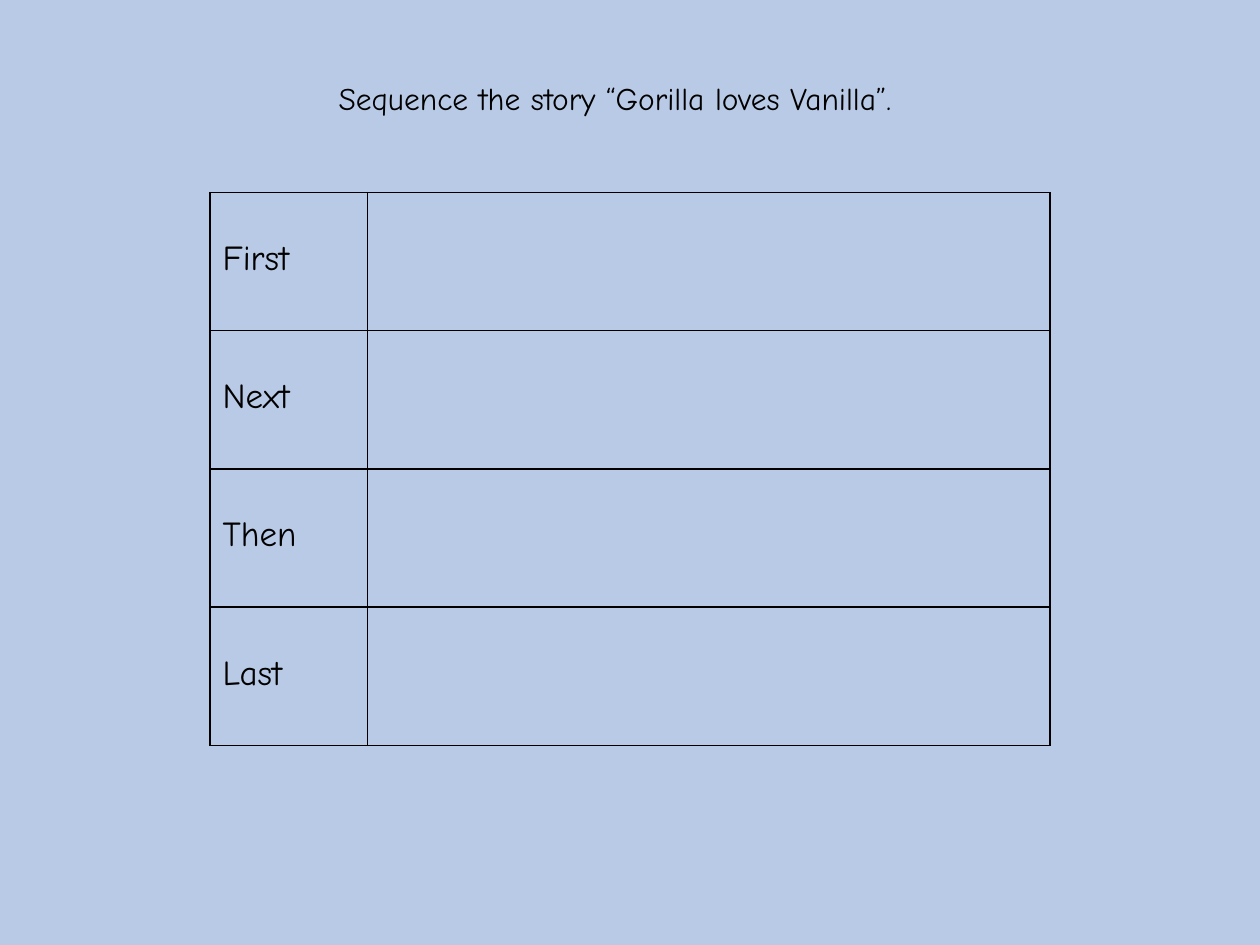
import pptx
import pptx.dml.color
import pptx.enum.text
import pptx.oxml
import pptx.oxml.ns
import pptx.util

Pt = pptx.util.Pt
BLACK = pptx.dml.color.RGBColor(0x00, 0x00, 0x00)
PALE_BLUE = pptx.dml.color.RGBColor(0xB8, 0xCA, 0xE6)


class StorySheet:
    """Hold the worksheet style and the slide being filled."""

    font_name = "Comic Neue"
    ink = BLACK
    border_width = Pt(1)

    def __init__(self, presentation):
        self.slide = presentation.slides.add_slide(presentation.slide_layouts[6])
        background = self.slide.background.fill
        background.solid()
        background.fore_color.rgb = PALE_BLUE

    def add_run(self, paragraph, text, size):
        run = paragraph.add_run()
        run.text = text
        run.font.name = self.font_name
        run.font.size = Pt(size)
        run.font.color.rgb = self.ink

    def add_title(self, text, left, top, width, height):
        shape = self.slide.shapes.add_textbox(Pt(left), Pt(top), Pt(width), Pt(height))
        frame = shape.text_frame
        frame.word_wrap = False
        frame.auto_size = pptx.enum.text.MSO_AUTO_SIZE.SHAPE_TO_FIT_TEXT
        frame.margin_left = frame.margin_right = Pt(3.6)
        frame.margin_top = frame.margin_bottom = Pt(3.6)
        paragraph = frame.paragraphs[0]
        paragraph.alignment = pptx.enum.text.PP_ALIGN.CENTER
        self.add_run(paragraph, text, 18)

    def add_borders(self, cell):
        properties = cell._tc.get_or_add_tcPr()
        namespace = pptx.oxml.ns.nsdecls("a")
        for index, side in enumerate(("lnL", "lnR", "lnT", "lnB")):
            line = pptx.oxml.parse_xml(
                f'<a:{side} {namespace} w="{self.border_width}"><a:solidFill>'
                f'<a:srgbClr val="{self.ink}"/></a:solidFill></a:{side}>'
            )
            properties.insert(index, line)

    def add_story_table(self, labels, left, top, column_widths, row_height):
        shape = self.slide.shapes.add_table(
            len(labels), len(column_widths), Pt(left), Pt(top),
            Pt(sum(column_widths)), Pt(row_height * len(labels)),
        )
        table = shape.table
        table.first_row = False
        table.horz_banding = False
        for column, width in zip(table.columns, column_widths):
            column.width = Pt(width)
        for row, label in zip(table.rows, labels):
            row.height = Pt(row_height)
            for cell in row.cells:
                cell.fill.background()
                self.add_borders(cell)
            label_cell = row.cells[0]
            label_cell.margin_top = Pt(26.6)
            self.add_run(label_cell.text_frame.paragraphs[0], label, 20)


def main():
    presentation = pptx.Presentation()
    presentation.slide_width = Pt(720)
    presentation.slide_height = Pt(540)
    sheet = StorySheet(presentation)
    sheet.add_title("Sequence the story “Gorilla loves Vanilla”.", 171.4, 41.8, 360, 28.8)
    sheet.add_story_table(("First", "Next", "Then", "Last"), 120, 110, (90, 390), 79)
    presentation.save("out.pptx")


if __name__ == "__main__":
    main()
